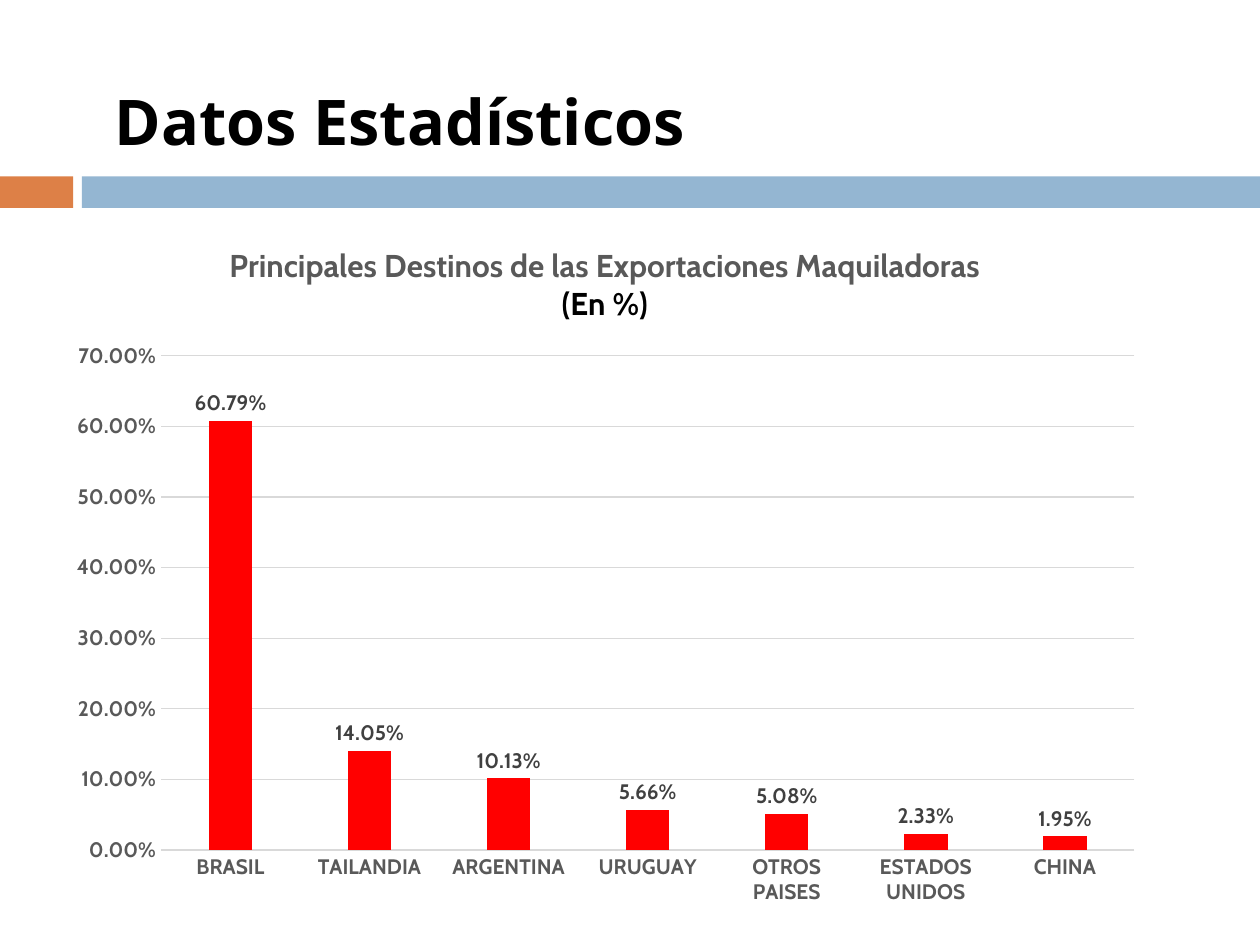
from lxml import etree
from pptx import Presentation
from pptx.chart.data import CategoryChartData
from pptx.dml.color import RGBColor
from pptx.enum.chart import XL_CHART_TYPE as ChartType, XL_LABEL_POSITION as LabelPosition
from pptx.enum.chart import XL_TICK_MARK as TickMark
from pptx.enum.shapes import MSO_SHAPE as Shape
from pptx.enum.text import MSO_ANCHOR as Anchor, PP_ALIGN as Align
from pptx.oxml.ns import qn
from pptx.util import Inches, Pt

BLACK = RGBColor(0x00, 0x00, 0x00)
GRAY = RGBColor(0x59, 0x59, 0x59)
DARK_GRAY = RGBColor(0x40, 0x40, 0x40)
LIGHT_GRAY = RGBColor(0xD9, 0xD9, 0xD9)
RED = RGBColor(0xFF, 0x00, 0x00)
ORANGE = RGBColor(0xDD, 0x80, 0x47)
BLUE = RGBColor(0x94, 0xB6, 0xD2)

TITLE = "Datos Estadísticos"
CHART_TITLE = [
    ("Principales Destinos de las Exportaciones Maquiladoras", GRAY),
    ("(En %)", BLACK),
]
DESTINATIONS = {
    "BRASIL": 0.6079,
    "TAILANDIA": 0.1405,
    "ARGENTINA": 0.1013,
    "URUGUAY": 0.0566,
    "OTROS PAISES": 0.0508,
    "ESTADOS UNIDOS": 0.0233,
    "CHINA": 0.0195,
}
PERCENT = "0.00%"
WIDTH, HEIGHT = 10, 7.5
BAND_TOP, BAND_HEIGHT = 1.4, 0.25
BANDS = [(0, 0.58, ORANGE), (0.65, WIDTH - 0.65, BLUE)]
TITLE_BOX = (0.81, 0.6, 7.02, 0.71)
CHART_BOX = (0.43, 1.75, 8.74, 5.54)
PLOT_SHARES = {"x": 0.097, "y": 0.194, "w": 0.884, "h": 0.708}


def style_font(font, size, color, name="Cabin", bold=True):
    font.size = Pt(size)
    font.name = name
    font.bold = bold
    font.color.rgb = color


def style_line(line, color):
    line.color.rgb = color
    line.width = Pt(0.75)


def add_bands(slide):
    for left, width, color in BANDS:
        band = slide.shapes.add_shape(
            Shape.RECTANGLE, *map(Inches, (left, BAND_TOP, width, BAND_HEIGHT)))
        band.shadow.inherit = False
        band.fill.solid()
        band.fill.fore_color.rgb = color
        band.line.fill.background()


def add_title(slide):
    title = slide.shapes.title
    title.left, title.top, title.width, title.height = map(Inches, TITLE_BOX)
    frame = title.text_frame
    frame.text = TITLE
    frame.word_wrap = True
    frame.vertical_anchor = Anchor.MIDDLE
    paragraph = frame.paragraphs[0]
    paragraph.alignment = Align.LEFT
    style_font(paragraph.runs[0].font, 36, BLACK, "Open Sans")


def place_plot(chart):
    plot_area = chart.plots[0]._element.getparent()
    for layout in plot_area.findall(qn("c:layout")):
        plot_area.remove(layout)
    layout = etree.Element(qn("c:layout"))
    plot_area.insert(0, layout)
    manual = etree.SubElement(layout, qn("c:manualLayout"))
    settings = {"layoutTarget": "inner", "xMode": "edge", "yMode": "edge", **PLOT_SHARES}
    for name, value in settings.items():
        etree.SubElement(manual, qn(f"c:{name}")).set("val", str(value))


def add_chart(slide):
    data = CategoryChartData(number_format=PERCENT)
    data.categories = list(DESTINATIONS)
    data.add_series("Series 1", list(DESTINATIONS.values()))
    chart = slide.shapes.add_chart(
        ChartType.COLUMN_CLUSTERED, *map(Inches, CHART_BOX), data).chart
    style_font(chart.font, 10, BLACK, bold=False)
    chart.has_legend = False

    frame = chart.chart_title.text_frame
    frame.text = "\n".join(text for text, color in CHART_TITLE)
    for paragraph, (text, color) in zip(frame.paragraphs, CHART_TITLE):
        style_font(paragraph.runs[0].font, 18, color)
    chart.chart_title.include_in_layout = False

    for axis in (chart.category_axis, chart.value_axis):
        axis.major_tick_mark = axis.minor_tick_mark = TickMark.NONE
        style_font(axis.tick_labels.font, 12, GRAY)
    style_line(chart.category_axis.format.line, LIGHT_GRAY)

    values = chart.value_axis
    values.minimum_scale, values.maximum_scale, values.major_unit = 0, 0.7, 0.1
    values.format.line.fill.background()
    style_line(values.major_gridlines.format.line, LIGHT_GRAY)
    values.tick_labels.number_format = PERCENT
    values.tick_labels.number_format_is_linked = False

    plot = chart.plots[0]
    plot.vary_by_categories = False
    plot.gap_width, plot.overlap = 219, -27
    fill = plot.series[0].format.fill
    fill.solid()
    fill.fore_color.rgb = RED
    labels = plot.series[0].data_labels
    labels.show_value = True
    labels.position = LabelPosition.OUTSIDE_END
    labels.number_format = PERCENT
    labels.number_format_is_linked = False
    style_font(labels.font, 12, DARK_GRAY)
    place_plot(chart)


def main():
    presentation = Presentation()
    presentation.slide_width, presentation.slide_height = Inches(WIDTH), Inches(HEIGHT)
    slide = presentation.slides.add_slide(presentation.slide_layouts[5])
    add_bands(slide)
    add_title(slide)
    add_chart(slide)
    presentation.save("out.pptx")


if __name__ == "__main__":
    main()
